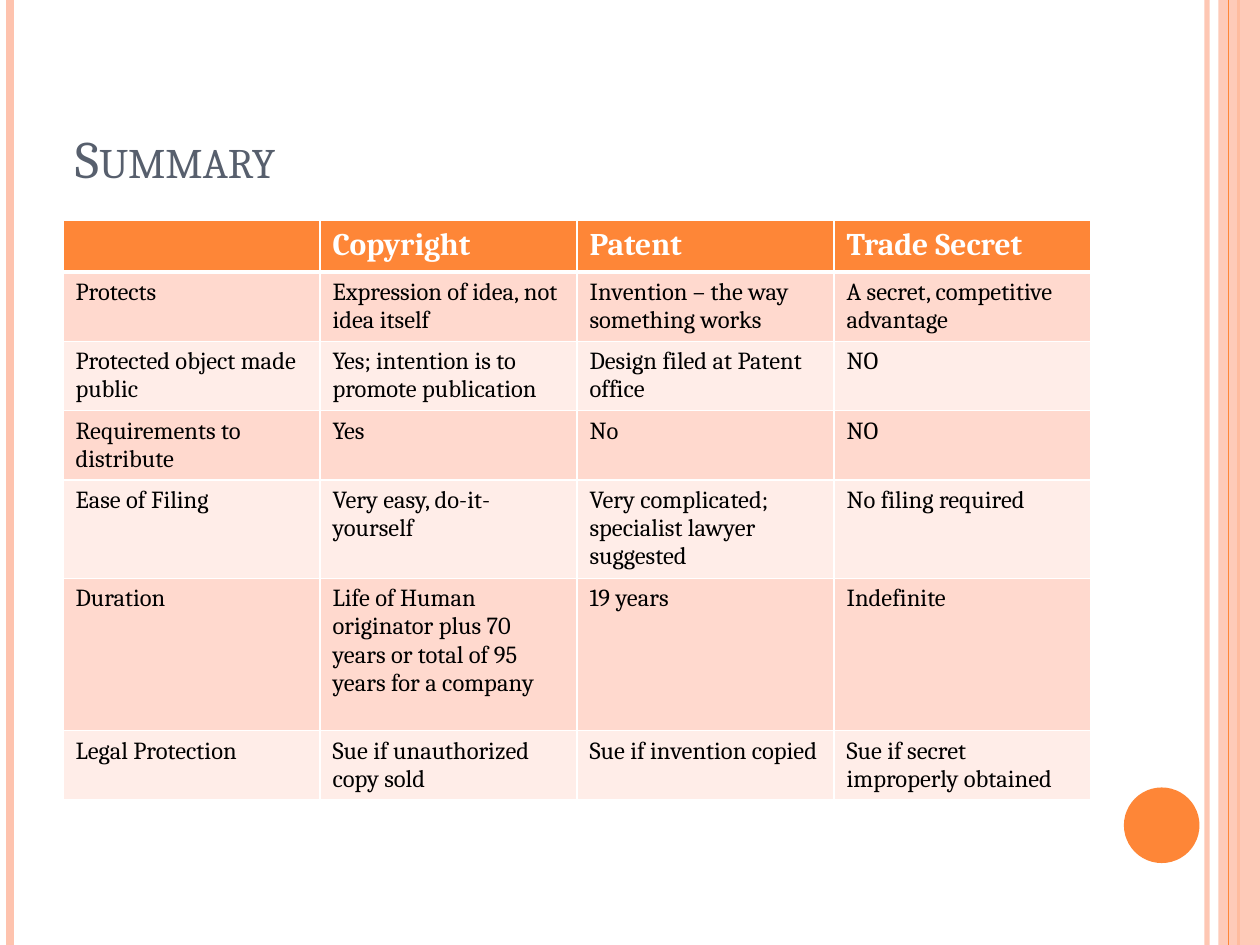
from dataclasses import dataclass

from lxml import etree
from pptx import Presentation
from pptx.dml.color import RGBColor
from pptx.enum import shapes, text
from pptx.oxml import ns
from pptx.util import Inches, Pt

FONT = "Cambria"
COLORS = {
    "orange": "FE8637", "peach": "FEC3AE", "slate": "575F6D",
    "white": "FFFFFF", "black": "000000", "dark": "FFD9CE", "light": "FFEDE8",
}
HIGH = 7.5


@dataclass
class Rule:
    x: float
    color: str
    width: float
    alpha: int = 100


@dataclass
class Row:
    height: float
    cells: tuple[str, ...]


BACK = [Rule(9.58, "peach", 3, 93), Rule(0.08, "peach", 4.5), Rule(9.83, "orange", 1.5)]
FRONT = Rule(9.75, "orange", 0.75)

ROWS = [
    Row(0.41, ("", "Copyright", "Patent", "Trade Secret")),
    Row(0.55, ("Protects", "Expression of idea, not idea itself",
               "Invention – the way something works", "A secret, competitive advantage")),
    Row(0.55, ("Protected object made public", "Yes; intention is to promote publication",
               "Design filed at Patent office", "NO")),
    Row(0.55, ("Requirements to distribute", "Yes", "No", "NO")),
    Row(0.78, ("Ease of Filing", "Very easy, do-it-yourself",
               "Very complicated; specialist lawyer suggested", "No filing required")),
    Row(1.21, ("Duration",
               "Life of Human originator plus 70 years or total of 95 years for a company",
               "19 years", "Indefinite")),
    Row(0.55, ("Legal Protection", "Sue if unauthorized copy sold",
               "Sue if invention copied", "Sue if secret improperly obtained")),
]


def rgb(name: str) -> RGBColor:
    return RGBColor.from_string(COLORS[name])


def fade(shape, alpha: int) -> None:
    """Set the opacity, in percent, of the shape's first solid colour."""
    color = next(shape._element.spPr.iter(ns.qn("a:srgbClr")))
    etree.SubElement(color, ns.qn("a:alpha"), val=str(alpha * 1000))


def write(frame, words: str, *, size: float, color: str,
          bold: bool = False, caps: bool = False) -> None:
    para = frame.paragraphs[0]
    para.alignment = text.PP_ALIGN.LEFT
    para.font.size = Pt(size)
    if not words:
        return
    run = para.add_run()
    run.text = words
    font = run.font
    font.name, font.size, font.bold = FONT, Pt(size), bold
    font.color.rgb = rgb(color)
    if caps:
        run._r.get_or_add_rPr().set("cap", "small")


def draw_rule(slide, rule: Rule) -> None:
    x = Inches(rule.x)
    line = slide.shapes.add_connector(
        shapes.MSO_CONNECTOR.STRAIGHT, x, 0, x, Inches(HIGH))
    line.line.color.rgb = rgb(rule.color)
    line.line.width = Pt(rule.width)
    if rule.alpha < 100:
        fade(line, rule.alpha)
    etree.SubElement(line._element.spPr, ns.qn("a:effectLst"))


def draw_shape(slide, kind, box: tuple[float, ...], color: str):
    shape = slide.shapes.add_shape(kind, *map(Inches, box))
    shape.shadow.inherit = False
    shape.fill.solid()
    shape.fill.fore_color.rgb = rgb(color)
    shape.line.fill.background()
    return shape


def edge(cell, head: bool, first: bool) -> None:
    """Give the cell white borders, thick between header and body."""
    props = cell._tc.get_or_add_tcPr()
    widths = {"L": 1, "R": 1, "T": 3 if first else 1, "B": 3 if head else 1}
    for spot, (side, width) in enumerate(widths.items()):
        line = etree.Element(ns.qn(f"a:ln{side}"), w=str(Pt(width)))
        fill = etree.SubElement(line, ns.qn("a:solidFill"))
        etree.SubElement(fill, ns.qn("a:srgbClr"), val=COLORS["white"])
        props.insert(spot, line)


def draw_table(slide, rows: list[Row]) -> None:
    count = len(rows[0].cells)
    total = sum(row.height for row in rows)
    table = slide.shapes.add_table(
        len(rows), count, Inches(0.5), Inches(1.75), Inches(8.16), Inches(total)).table
    for col in table.columns:
        col.width = Inches(2.04)
    for r, row in enumerate(rows):
        table.rows[r].height = Inches(row.height)
        head = r == 0
        shade = "orange" if head else ("light", "dark")[r % 2]
        for c, words in enumerate(row.cells):
            cell = table.cell(r, c)
            cell.fill.solid()
            cell.fill.fore_color.rgb = rgb(shade)
            edge(cell, head, r == 1)
            write(cell.text_frame, words, size=18 if head else 14,
                  color="white" if head else "black", bold=head)


def place_title(slide, words: str) -> None:
    title = slide.shapes.title
    title.left, title.top = Inches(0.5), Inches(0.3)
    title.width, title.height = Inches(8.17), Inches(1.25)
    frame = title.text_frame
    frame.word_wrap = True
    frame.auto_size = text.MSO_AUTO_SIZE.NONE
    frame.vertical_anchor = text.MSO_ANCHOR.BOTTOM
    write(frame, words, size=30, color="slate", caps=True)


def main() -> None:
    deck = Presentation()
    deck.slide_width, deck.slide_height = Inches(10), Inches(HIGH)
    slide = deck.slides.add_slide(deck.slide_layouts[5])
    for rule in BACK:
        draw_rule(slide, rule)
    band = draw_shape(slide, shapes.MSO_SHAPE.RECTANGLE, (9.67, 0, 0.33, HIGH), "peach")
    fade(band, 87)
    draw_rule(slide, FRONT)
    draw_shape(slide, shapes.MSO_SHAPE.OVAL, (8.92, 6.25, 0.6, 0.6), "orange")
    place_title(slide, "Summary")
    draw_table(slide, ROWS)
    deck.save("out.pptx")


if __name__ == "__main__":
    main()
